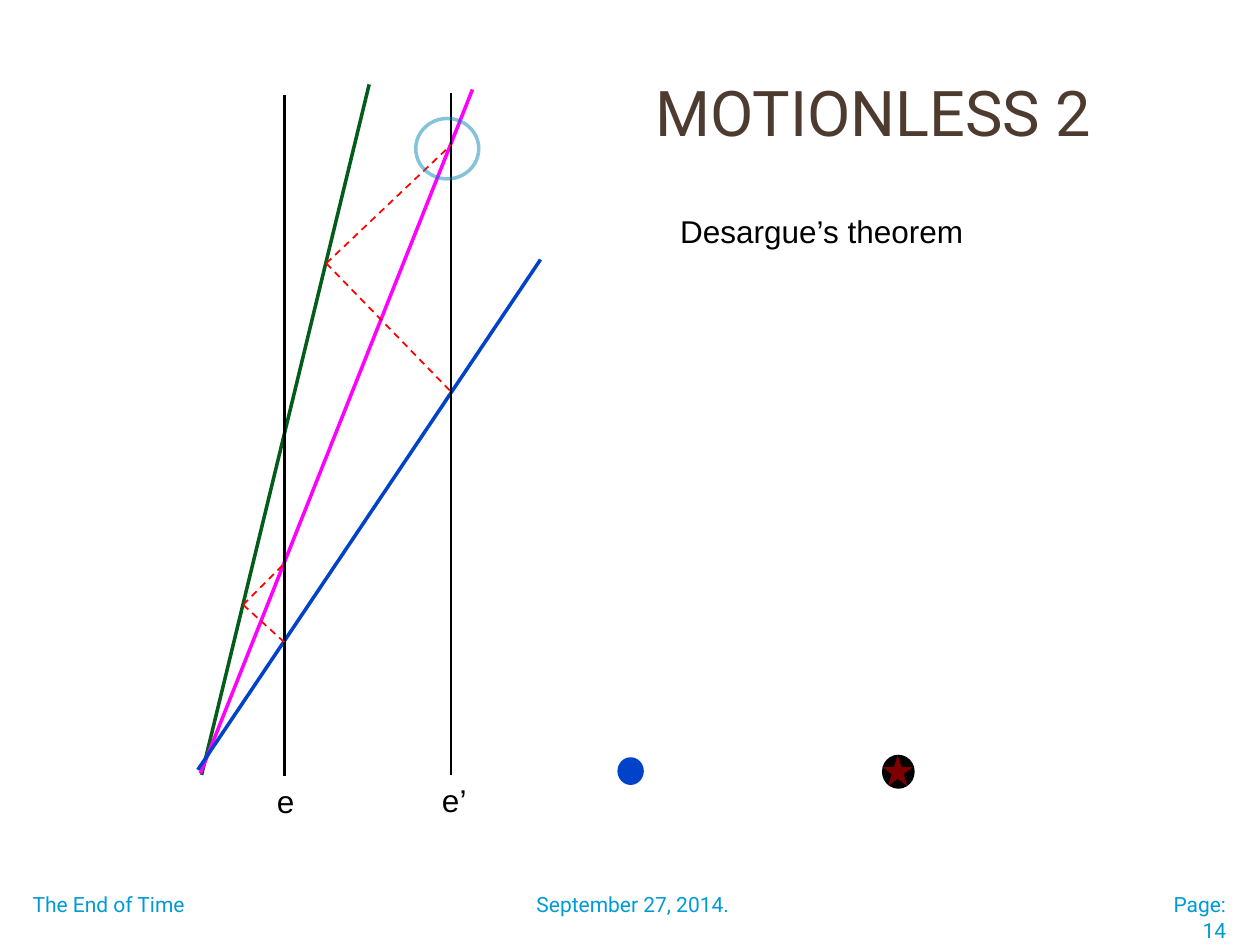
from collections import namedtuple

from lxml import etree
from pptx import Presentation
from pptx.dml.color import RGBColor
from pptx.enum import dml, shapes, text
from pptx.oxml import ns
from pptx.util import Inches, Pt

BLACK = RGBColor(0x00, 0x00, 0x00)
GREEN = RGBColor(0x04, 0x5C, 0x1B)
MAGENTA = RGBColor(0xFF, 0x00, 0xFF)
BLUE = RGBColor(0x00, 0x42, 0xC8)
RED = RGBColor(0xFF, 0x00, 0x00)
RING_BLUE = RGBColor(0x00, 0x82, 0xB2)
FOOTER_BLUE = RGBColor(0x00, 0x9B, 0xD4)
BROWN = RGBColor(0x4E, 0x3B, 0x30)

Box = namedtuple("Box", "left top width height")


def write_text(frame, words, font="Arial", size=18, color=BLACK,
               align=text.PP_ALIGN.LEFT, anchor=text.MSO_ANCHOR.TOP,
               wrap=True, spacing=None):
    """Put one formatted paragraph into a text frame."""
    frame.word_wrap = wrap
    frame.auto_size = text.MSO_AUTO_SIZE.NONE
    frame.vertical_anchor = anchor
    para = frame.paragraphs[0]
    para.alignment = align
    para.line_spacing = spacing
    span = para.add_run()
    span.text = words
    span.font.name = font
    span.font.size = Pt(size)
    span.font.color.rgb = color


def add_label(page, box, words, **style):
    """Add a text box holding one formatted paragraph."""
    label = page.shapes.add_textbox(*map(Inches, box))
    write_text(label.text_frame, words, **style)


def set_opacity(fill_parent, percent):
    """Make the solid colour below an element partly transparent."""
    color = fill_parent.find(ns.qn("a:solidFill"))[0]
    etree.SubElement(color, ns.qn("a:alpha"), val=str(percent * 1000))


def add_mark(page, kind, box, fill=None, line=None, opacity=None):
    """Add a shape with either a plain fill or a 2-point outline."""
    mark = page.shapes.add_shape(kind, *map(Inches, box))
    mark.shadow.inherit = False
    properties = mark._element.spPr
    if fill is None:
        mark.fill.background()
        mark.line.color.rgb = line
        mark.line.width = Pt(2)
        properties = properties.find(ns.qn("a:ln"))
    else:
        mark.fill.solid()
        mark.fill.fore_color.rgb = fill
        mark.line.fill.background()
    if opacity is not None:
        set_opacity(properties, opacity)


def add_line(page, box, start, end, color, width, dashed=False):
    """Draw a straight line between two points relative to a box."""
    points = [Inches(origin + offset) for point in (start, end)
              for origin, offset in zip((box.left, box.top), point)]
    line = page.shapes.add_connector(shapes.MSO_CONNECTOR.STRAIGHT, *points)
    line.line.color.rgb = color
    line.line.width = Pt(width)
    if dashed:
        line.line.dash_style = dml.MSO_LINE.DASH
    etree.SubElement(line._element.spPr, ns.qn("a:effectLst"))


def add_heading(page, box):
    """Place the title and the name of the theorem below it."""
    title = page.shapes.title
    title.left, title.top = Inches(box.left), Inches(box.top)
    title.width, title.height = Inches(box.width), Inches(0.84)
    write_text(title.text_frame, "MOTIONLESS 2", font="Roboto", size=36,
               color=BROWN, anchor=text.MSO_ANCHOR.MIDDLE, spacing=0.9)
    add_label(page, (box.left + 0.2, box.top + 1.13, 2.47, 0.4),
              "Desargue’s theorem", wrap=False)


def add_diagram(page, box):
    """Draw the rays, the two verticals and the dashed triangle sides."""
    rays = [((1.36, 0), (0.03, 5.48), GREEN),
            ((0.02, 5.47), (2.18, 0.04), MAGENTA),
            ((0, 5.44), (2.72, 1.39), BLUE)]
    for start, end, color in rays:
        add_line(page, box, start, end, color, 2)

    verticals = [("e", 0.69, 0.08, 5.49, 1.75, 0.53, 0.34),
                 ("e’", 2.01, 0.07, 5.48, 1.5, 1.84, 0.43)]
    for name, x, top, bottom, weight, label_x, label_width in verticals:
        add_line(page, box, (x, top), (x, bottom), BLACK, weight)
        add_label(page, (box.left + label_x, box.top + bottom,
                         label_width, 0.4), name, wrap=False)

    triangles = [((0.36, 4.13), (0.69, 3.8), (0.69, 4.43)),
                 ((1.02, 1.42), (2.01, 0.48), (2.01, 2.44))]
    for corner, upper, lower in triangles:
        for end in (upper, lower):
            add_line(page, box, corner, end, RED, 1, dashed=True)

    add_mark(page, shapes.MSO_SHAPE.OVAL,
             (box.left + 1.73, box.top + 0.27, 0.5, 0.48),
             line=RING_BLUE, opacity=48)


def add_markers(page, box):
    """Place the blue dot and the black dot with its star."""
    add_mark(page, shapes.MSO_SHAPE.FLOWCHART_CONNECTOR,
             (box.left, box.top + 0.02, 0.21, 0.22), fill=BLUE)
    star_left = box.left + 2.1
    add_mark(page, shapes.MSO_SHAPE.OVAL,
             (star_left, box.top, 0.26, box.height), fill=BLACK)
    add_mark(page, shapes.MSO_SHAPE.STAR_5_POINT,
             (star_left, box.top, 0.25, 0.25), fill=RED, opacity=49)


def add_footer(page, box):
    """Place the talk name, date and page number along the bottom."""
    parts = [("The End of Time", 0, 3.91, text.PP_ALIGN.LEFT),
             ("September 27, 2014.", 4, 4.43, text.PP_ALIGN.LEFT),
             ("Page: 14", 8.84, 0.83, text.PP_ALIGN.RIGHT)]
    for words, offset, width, align in parts:
        add_label(page, (box.left + offset, box.top, width, box.height),
                  words, font="Roboto", size=12, color=FOOTER_BLUE,
                  align=align)


def main():
    """Build the slide and save the deck."""
    deck = Presentation()
    deck.slide_width, deck.slide_height = Inches(10), Inches(7.5)
    page = deck.slides.add_slide(deck.slide_layouts.get_by_name("Title Only"))
    add_footer(page, Box(0.16, 7.03, 9.67, 0.32))
    add_diagram(page, Box(1.57, 0.67, 2.72, 5.88))
    add_markers(page, Box(4.9, 5.99, 2.36, 0.27))
    add_heading(page, Box(5.1, 0.5, 4.17, 1.53))
    deck.save("out.pptx")


if __name__ == "__main__":
    main()
